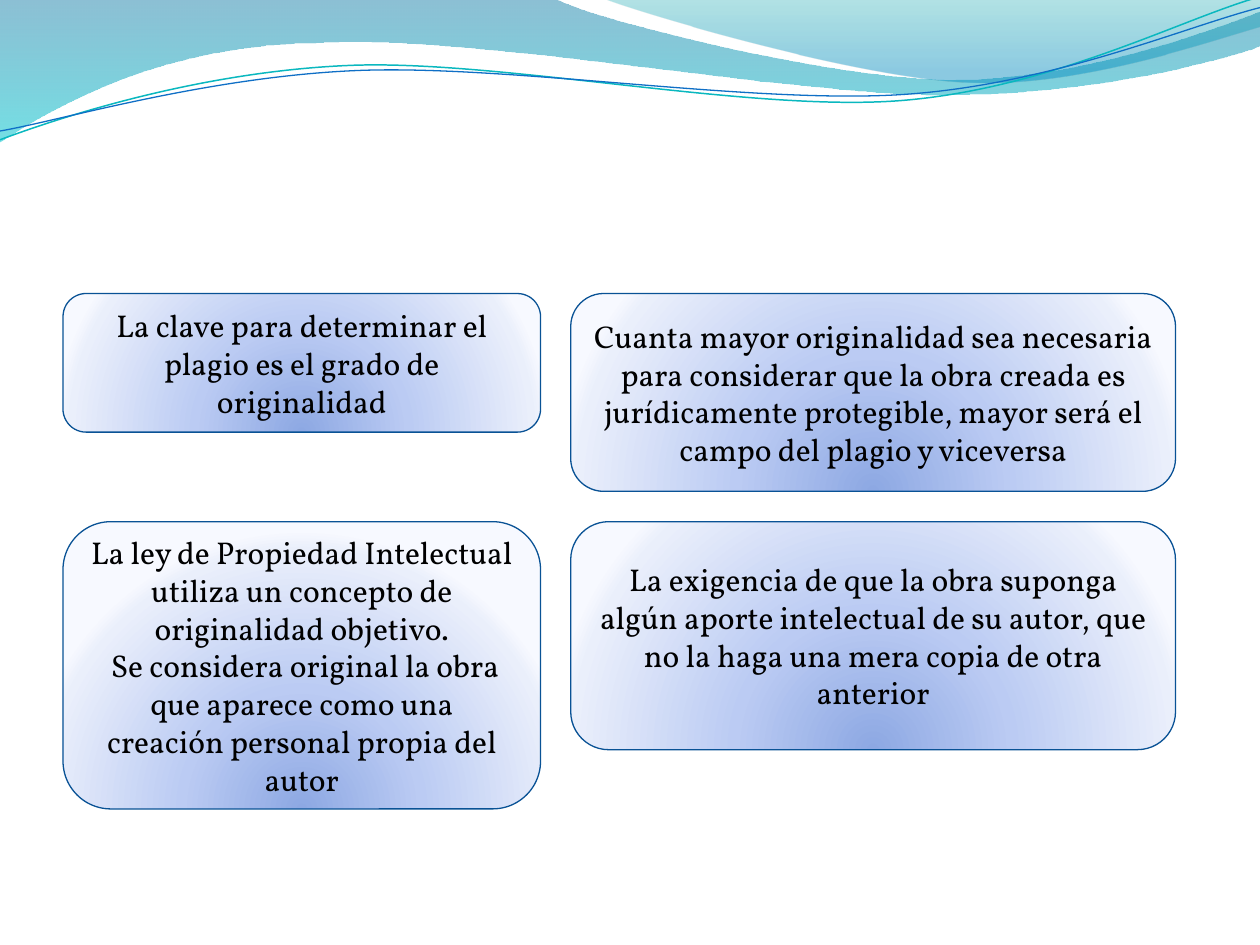
import math

import lxml.etree
import pptx
import pptx.dml.color
import pptx.enum.shapes
import pptx.enum.text
import pptx.oxml.ns
import pptx.util

Inches = pptx.util.Inches
qn = pptx.oxml.ns.qn

COLORS = {
    "deep_blue": "0074A1", "aqua": "00C6CF",
    "teal": "00A1A9", "sky": "008BBF",
    "teal_line": "0AB8BF", "blue_line": "0F6FC6",
    "core": "8DA8E3", "middle": "BBCBF3", "pale": "EAEFFB", "edge": "F7F9FF",
    "border": "095295", "text": "000000",
}
CARD_STOPS = [(0, "core", 100), (43, "middle", 100), (93, "pale", 100), (100, "edge", 100)]
FONT = "Vollkorn"
CURVE_ROTATION = 357.3

# Each curve holds two control points and an end point.
LEFT_WAVE = [
    [(0, -0.01)], [(4.4, -0.01)],
    [(4.76, 0.17), (6.64, 0.63), (7.58, 0.63)],
    [(8.53, 0.63), (9.58, 0.26), (10, 0.09)],
    [(10.01, 0.36)],
    [(9.83, 0.44), (8.7, 0.76), (7.46, 0.75)],
    [(6.22, 0.75), (3.82, 0.28), (2.57, 0.34)],
    [(1.29, 0.35), (0.46, 0.83), (-0.01, 1.13)],
    [(0, -0.01)],
]
RIGHT_WAVE = [
    [(4.79, -0.01)],
    [(5.09, 0.11), (6.82, 0.62), (7.69, 0.65)],
    [(8.56, 0.69), (9.61, 0.32), (10, 0.21)],
    [(10, 0)], [(4.79, -0.01)],
]
TEAL_CURVE = [
    [(0, 1.11)],
    [(0.48, 0.93), (1.58, 0.57), (2.77, 0.52)],
    [(3.95, 0.47), (5.93, 0.89), (7.13, 0.8)],
    [(8.33, 0.71), (9.38, 0.15), (9.98, -0.02)],
]
BLUE_CURVE = [
    [(0, 1.04)],
    [(0.47, 0.96), (1.64, 0.61), (2.83, 0.56)],
    [(4.03, 0.51), (5.97, 0.83), (7.17, 0.75)],
    [(8.36, 0.67), (9.41, 0.21), (10, 0.06)],
]

COLUMNS = [(0.5, 3.79), (4.53, 4.8)]
ROWS = [2.33, 4.14]
# Column, row, height, paragraphs
CARDS = [
    (0, 0, 1.1, ["La clave para determinar el plagio es el grado de originalidad"]),
    (1, 0, 1.57, ["Cuanta mayor originalidad sea necesaria para considerar que la obra "
                  "creada es jurídicamente protegible, mayor será el campo del plagio y "
                  "viceversa"]),
    (0, 1, 2.28, ["La ley de Propiedad Intelectual utiliza un concepto de originalidad "
                  "objetivo.",
                  " Se considera original la obra que aparece como una creación personal "
                  "propia del autor"]),
    (1, 1, 1.81, ["La exigencia de que la obra suponga algún aporte intelectual de su "
                  "autor, que no la haga una mera copia de otra anterior"]),
]


def rgb(name):
    return pptx.dml.color.RGBColor.from_string(COLORS[name])


def set_gradient(shape, stops, radial=False):
    """Fill with (position %, colour name, opacity %) stops, downwards or radially."""
    shape.fill.gradient()
    gradient = shape._element.spPr.find(qn("a:gradFill"))
    gradient.clear()
    stop_list = lxml.etree.SubElement(gradient, qn("a:gsLst"))
    for position, color, opacity in stops:
        stop = lxml.etree.SubElement(stop_list, qn("a:gs"), pos=str(position * 1000))
        value = lxml.etree.SubElement(stop, qn("a:srgbClr"), val=COLORS[color])
        if opacity < 100:
            lxml.etree.SubElement(value, qn("a:alpha"), val=str(opacity * 1000))
    if radial:
        circle = lxml.etree.SubElement(gradient, qn("a:path"), path="circle")
        lxml.etree.SubElement(circle, qn("a:fillToRect"),
                              l="50000", t="130000", r="50000", b="-30000")
    else:
        lxml.etree.SubElement(gradient, qn("a:lin"), ang="5400000", scaled="1")


def add_outline(slide, box, segments, close=False, rotation=0):
    """Draw line and Bézier segments, given as they lie after rotating the box."""
    left, top, width, height = box
    center_x, center_y = left + width / 2, top + height / 2
    cos, sin = math.cos(math.radians(rotation)), math.sin(math.radians(rotation))

    def to_local(point):
        dx, dy = point[0] - center_x, point[1] - center_y
        return (Inches(dx * cos + dy * sin + width / 2),
                Inches(dy * cos - dx * sin + height / 2))

    builder = slide.shapes.build_freeform(Inches(left), Inches(top))
    builder.add_line_segments([(Inches(left + width), Inches(top + height))], close=close)
    outline = builder.convert_to_shape()
    outline.left, outline.top = Inches(left), Inches(top)
    outline.width, outline.height = Inches(width), Inches(height)
    outline.rotation = rotation
    outline.shadow.inherit = False

    track = next(outline._element.iter(qn("a:path")))
    track.clear()
    track.set("w", str(Inches(width)))
    track.set("h", str(Inches(height)))
    for index, segment in enumerate(segments):
        tag = "a:cubicBezTo" if len(segment) == 3 else "a:lnTo" if index else "a:moveTo"
        command = lxml.etree.SubElement(track, qn(tag))
        for x, y in map(to_local, segment):
            lxml.etree.SubElement(command, qn("a:pt"), x=str(x), y=str(y))
    if close:
        lxml.etree.SubElement(track, qn("a:close"))
    return outline


def add_wave(slide, box, segments, stops):
    wave = add_outline(slide, box, segments, close=True)
    set_gradient(wave, stops)
    wave.line.fill.background()


def add_curve(slide, box, segments, color, width):
    curve = add_outline(slide, box, segments, rotation=CURVE_ROTATION)
    curve.fill.background()
    curve.line.color.rgb = rgb(color)
    curve.line.width = pptx.util.Pt(width)


def add_card(slide, column, row, height, paragraphs):
    left, width = COLUMNS[column]
    card = slide.shapes.add_shape(
        pptx.enum.shapes.MSO_SHAPE.ROUNDED_RECTANGLE,
        Inches(left), Inches(ROWS[row]), Inches(width), Inches(height))
    card.shadow.inherit = False
    set_gradient(card, CARD_STOPS, radial=True)
    card.line.color.rgb = rgb("border")
    card.line.width = pptx.util.Pt(0.75)
    frame = card.text_frame
    frame.word_wrap = True
    frame.vertical_anchor = pptx.enum.text.MSO_ANCHOR.MIDDLE
    for index, text in enumerate(paragraphs):
        paragraph = frame.add_paragraph() if index else frame.paragraphs[0]
        paragraph.alignment = pptx.enum.text.PP_ALIGN.CENTER
        run = paragraph.add_run()
        run.text = text
        run.font.name = FONT
        run.font.size = pptx.util.Pt(18)
        run.font.color.rgb = rgb("text")


def main():
    deck = pptx.Presentation()
    deck.slide_width, deck.slide_height = Inches(10), Inches(7.5)
    slide = deck.slides.add_slide(deck.slide_layouts[6])
    add_wave(slide, (-0.01, -0.01, 10.02, 1.14), LEFT_WAVE,
             [(0, "deep_blue", 45), (100, "aqua", 55)])
    add_wave(slide, (4.79, -0.01, 5.21, 0.7), RIGHT_WAVE,
             [(0, "teal", 30), (80, "sky", 45)])
    add_curve(slide, (-0.02, 0.22, 10.02, 0.71), TEAL_CURVE, "teal_line", 0.85)
    add_curve(slide, (-0.02, 0.3, 10.03, 0.58), BLUE_CURVE, "blue_line", 0.75)
    for card in CARDS:
        add_card(slide, *card)
    deck.save("out.pptx")


if __name__ == "__main__":
    main()
